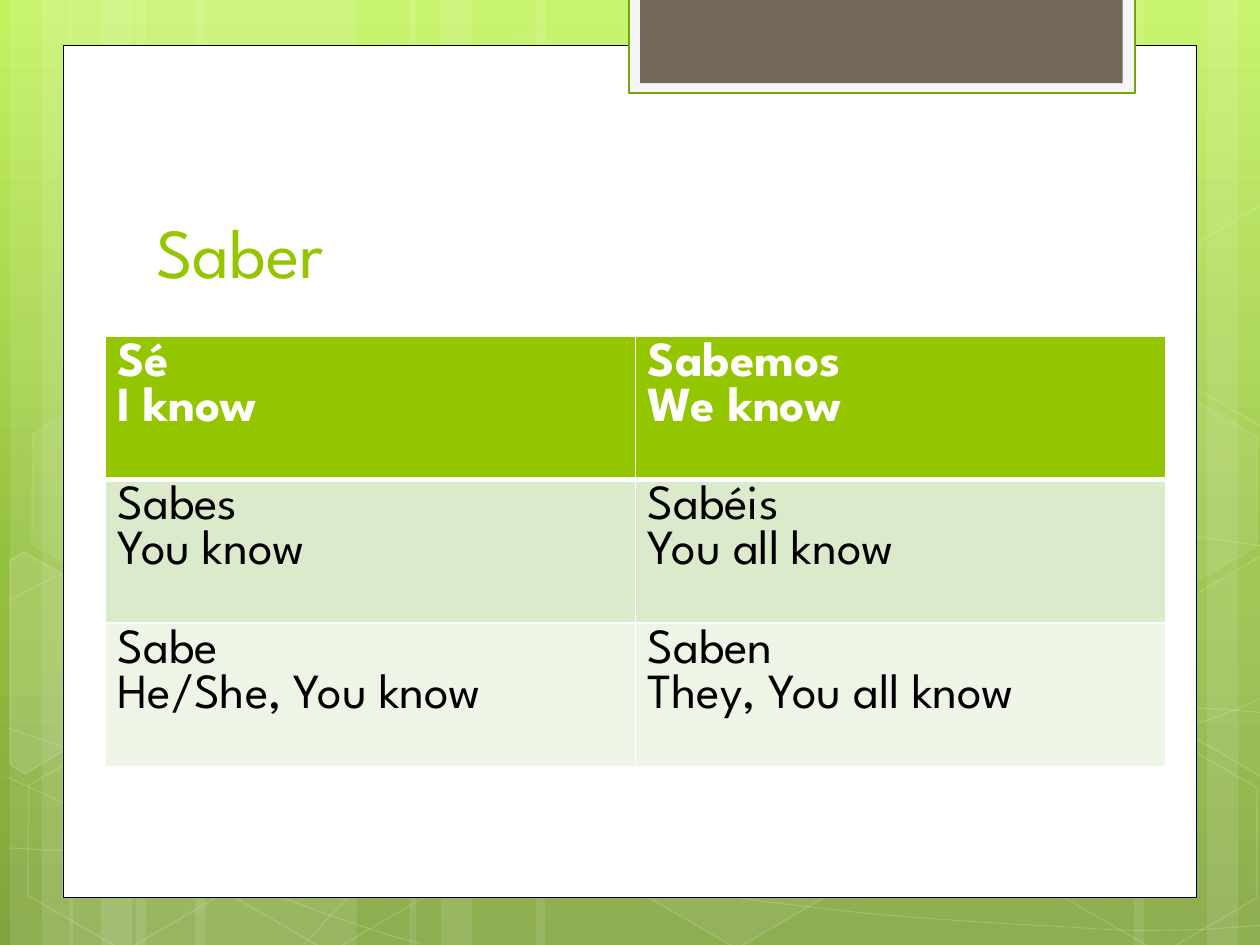
"""Build the conjugation slide for the Spanish verb saber."""
from lxml import etree
from pptx import Presentation
from pptx.dml.color import RGBColor
from pptx.enum import shapes, text
from pptx.oxml import parse_xml
from pptx.oxml.ns import nsdecls, qn
from pptx.util import Inches, Pt

FONT = "League Spartan"
WHITE = RGBColor(0xFF, 0xFF, 0xFF)
BLACK = RGBColor(0x00, 0x00, 0x00)
LIME = RGBColor(0x94, 0xC6, 0x00)
PALE_LIME = RGBColor(0xDC, 0xEA, 0xCC)
PALEST_LIME = RGBColor(0xEE, 0xF5, 0xE7)
TAB_EDGE = RGBColor(0x74, 0xA5, 0x10)
TAB_RIM = RGBColor(0xF5, 0xF5, 0xF5)
TAB_BROWN = RGBColor(0x71, 0x68, 0x5A)
BACKDROP = [(0, RGBColor(0xC3, 0xF3, 0x5F)), (62, RGBColor(0x93, 0xBF, 0x3F)),
            (100, RGBColor(0x81, 0xA5, 0x3E))]


def veil(shape, fill_alpha, line_alpha, width=1):
    """Paint a shape in translucent white; an alpha of 0 leaves that part out."""
    shape.shadow.inherit = False
    shape.line.width = Pt(width)
    for paint, alpha in ((shape.fill, fill_alpha), (shape.line.fill, line_alpha)):
        if not alpha:
            paint.background()
            continue
        paint.solid()
        paint.fore_color.rgb = WHITE
        color = paint._xPr.find(qn("a:solidFill"))[0]
        etree.SubElement(color, qn("a:alpha"), val=str(alpha * 1000))


def outline(points, close):
    """Draw a freeform through points given in inches."""
    corners = [(Inches(x), Inches(y)) for x, y in points]
    builder = slide.shapes.build_freeform(*corners[0])
    builder.add_line_segments(corners[1:], close=close)
    return builder.convert_to_shape()


prs = Presentation()
prs.slide_width, prs.slide_height = Inches(10), Inches(7.5)
layout = prs.slide_layouts[5]
slide = prs.slides.add_slide(layout)

backdrop = slide.background.fill
backdrop.gradient()
backdrop.gradient_angle = 270
stops = slide.background._cSld.find(".//" + qn("a:gsLst"))
for stop in list(stops):
    stops.remove(stop)
for percent, color in BACKDROP:
    stops.append(parse_xml(f'<a:gs {nsdecls("a")} pos="{percent * 1000}">'
                           f'<a:srgbClr val="{color}"/></a:gs>'))

strips = [(1.08, 1.75), (0.08, 0.5), (0.33, 0.83), (1.55, 1.75), (0.55, 0.5),
          (0.8, 0.83), (7.33, 1.75), (9.58, 0.5), (9, 0.83), (4.25, 3.08),
          (3.25, 0.5), (3.5, 0.83)]
for left, width in strips:
    strip = slide.shapes.add_shape(shapes.MSO_SHAPE.RECTANGLE, Inches(left), 0,
                                   Inches(width), prs.slide_height)
    veil(strip, 10, 0)

waves = [
    [(0.07, 6.73), (0.61, 6.76), (1.15, 6.79), (1.9, 6.78), (2.65, 6.77),
     (3.58, 6.75), (4.58, 6.65), (5.58, 6.55), (7, 6.36), (7.92, 6.17),
     (8.83, 5.98), (9.77, 5.68), (10.07, 5.51)],
    [(0.07, 4.77), (0.36, 4.61), (0.65, 4.46), (1.21, 4.31), (1.78, 4.16),
     (2.59, 3.94), (3.47, 3.87), (4.36, 3.8), (5.44, 3.79), (6.54, 3.87),
     (7.64, 3.95), (9.47, 4.26), (10.07, 4.34)],
    [(0.06, 6.17), (1.27, 6.72), (2.47, 7.27), (3.34, 7.49)],
    [(0.07, 5.78), (0.38, 5.89), (0.7, 6), (1.28, 6.16), (1.86, 6.31),
     (2.73, 6.56), (3.57, 6.73), (4.4, 6.9), (5.45, 7.08), (6.28, 7.18),
     (7.11, 7.29), (8, 7.33), (8.53, 7.36), (9.05, 7.4), (9.19, 7.38),
     (9.45, 7.38), (9.71, 7.37), (9.89, 7.35), (10.07, 7.34)],
    [(2.42, 7.49), (2.6, 7.29), (2.78, 7.09), (3.02, 6.91), (3.26, 6.73),
     (3.6, 6.53), (3.88, 6.39), (4.16, 6.25), (4.33, 6.19), (4.7, 6.09),
     (5.06, 5.99), (5.73, 5.85), (6.08, 5.78), (6.44, 5.71), (6.49, 5.71),
     (6.8, 5.69), (7.11, 5.66), (7.6, 5.63), (7.94, 5.62), (8.29, 5.61),
     (8.86, 5.62), (8.86, 5.62), (9.08, 5.62), (9.3, 5.62), (9.53, 5.62),
     (9.71, 5.63), (9.88, 5.64), (10.06, 5.66)],
]
for wave in waves:
    ripple = outline(wave, False)
    segments = list(ripple._element.iter(qn("a:lnTo")))
    for first in range(0, len(segments), 3):
        bend = etree.SubElement(segments[first].getparent(), qn("a:cubicBezTo"))
        for segment in segments[first:first + 3]:
            bend.append(segment[0])
            segment.getparent().remove(segment)
    veil(ripple, 0, 20, 0.5)

hexagons = [(3.34, 0.36, 4, 8), (4.97, 5.89, 6, 12), (0.11, 5.91, 0, 12),
            (0.14, 3.12, 7, 8), (1.74, 5.92, 0, 12),
            (8.34, 5.93, 0, 12), (8.34, 3.14, 7, 8)]
for left, top, fill_alpha, line_alpha in hexagons:
    hexagon = slide.shapes.add_shape(shapes.MSO_SHAPE.HEXAGON, Inches(left), Inches(top),
                                     Inches(1.75), Inches(1.52))
    hexagon.adjustments[0], hexagon.adjustments[1] = 0.285, 1.155
    hexagon.rotation = 30
    veil(hexagon, fill_alpha, line_alpha)

cut_hexagons = [
    ([(0.08, 4.45), (0.19, 4.38), (0.96, 4.82), (0.95, 5.7), (0.2, 6.14), (0.08, 6.07)], 10),
    ([(9.26, 4.85), (10.01, 4.41), (10.09, 4.46), (10.09, 6.13), (10.02, 6.17),
      (9.26, 5.73)], 4),
    ([(9.26, 2.07), (10.01, 1.63), (10.1, 1.68), (10.09, 3.35), (10.02, 3.39),
      (9.26, 2.95)], 0),
]
for corners, fill_alpha in cut_hexagons:
    veil(outline(corners, True), fill_alpha, 12)

panels = [((0.5, 0.36, 9, 6.76), WHITE, BLACK, 0.5),
          ((4.99, -0.02, 4.02, 0.76), TAB_RIM, TAB_EDGE, 1.25),
          ((5.08, -0.02, 3.83, 0.68), TAB_BROWN, None, 0)]
for box, color, edge, width in panels:
    panel = slide.shapes.add_shape(shapes.MSO_SHAPE.RECTANGLE, *map(Inches, box))
    panel.shadow.inherit = False
    panel.fill.solid()
    panel.fill.fore_color.rgb = color
    if edge is None:
        panel.line.fill.background()
    else:
        panel.line.color.rgb = edge
        panel.line.width = Pt(width)

title = slide.shapes.title
for decoration in list(slide.shapes)[1:]:
    layout.shapes._spTree.append(decoration._element)

title.left, title.top, title.width, title.height = map(Inches, (1.14, 1.12, 7.68, 1.25))
title.text_frame.text = "Saber"
title.text_frame.vertical_anchor = text.MSO_ANCHOR.BOTTOM
heading = title.text_frame.paragraphs[0]
heading.alignment = text.PP_ALIGN.LEFT
heading.font.name, heading.font.size = FONT, Pt(40)
heading.font.color.rgb = LIME

conjugation = [
    (("Sé\nI know", "Sabemos\nWe know"), LIME, WHITE, 1, 3),
    (("Sabes\nYou know", "Sabéis\nYou all know"), PALE_LIME, BLACK, 3, 1),
    (("Sabe\nHe/She, You know", "Saben\nThey, You all know"), PALEST_LIME, BLACK, 1, 1),
]
verbs = slide.shapes.add_table(3, 2, Inches(5 / 6), Inches(8 / 3),
                               Inches(101 / 12), Inches(41 / 12)).table
for row, (forms, shade, ink, above, below) in enumerate(conjugation):
    for column, form in enumerate(forms):
        cell = verbs.cell(row, column)
        cell.text = form
        for paragraph in cell.text_frame.paragraphs:
            paragraph.font.name, paragraph.font.size = FONT, Pt(28)
            paragraph.font.bold = row == 0
            paragraph.font.color.rgb = ink
        borders = {"lnL": 1, "lnR": 1, "lnT": above, "lnB": below}
        for side, width in borders.items():
            cell._tc.get_or_add_tcPr().append(parse_xml(
                f'<a:{side} {nsdecls("a")} w="{Pt(width)}"><a:solidFill>'
                f'<a:srgbClr val="{WHITE}"/></a:solidFill></a:{side}>'))
        cell.fill.solid()
        cell.fill.fore_color.rgb = shade

prs.save("out.pptx")
